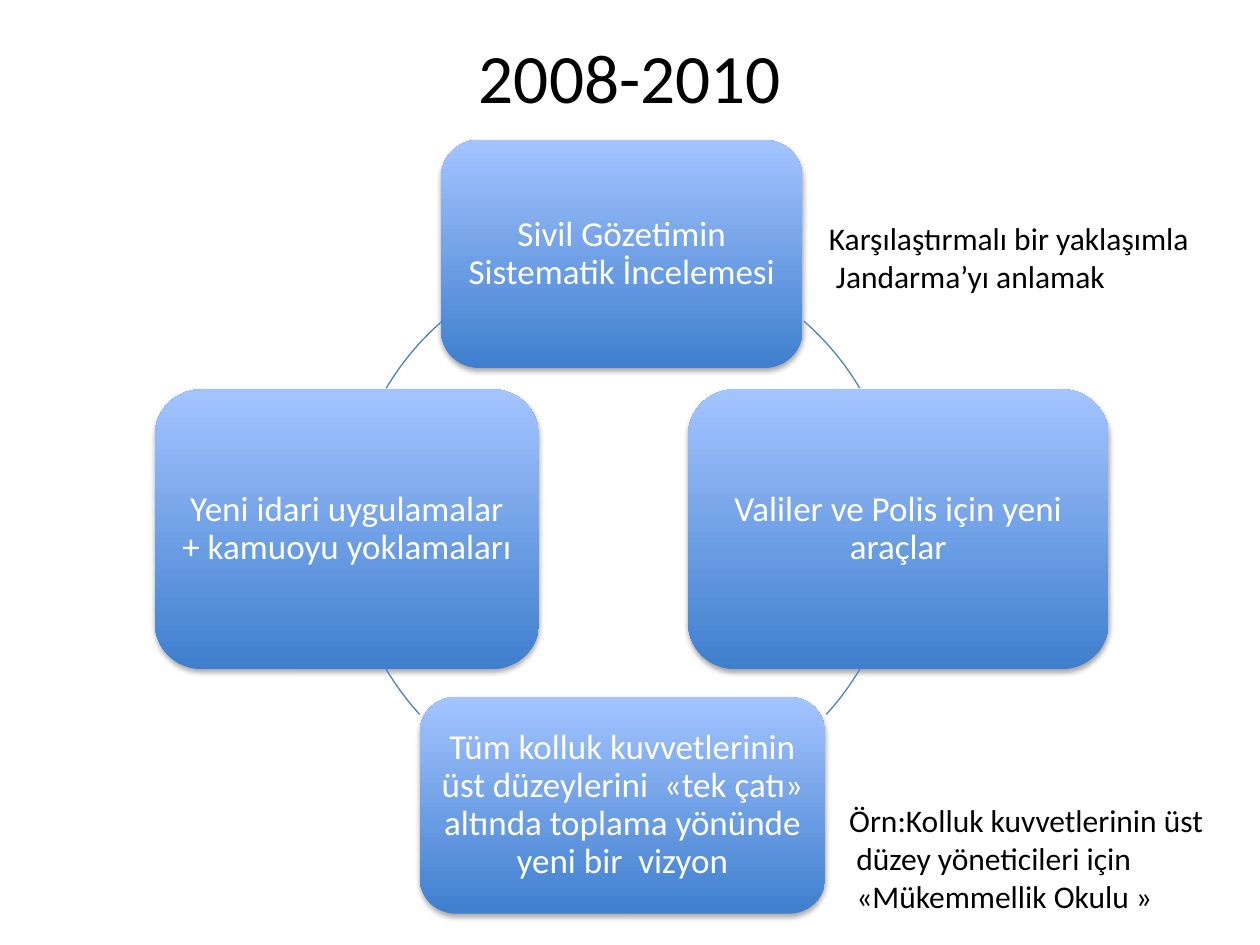
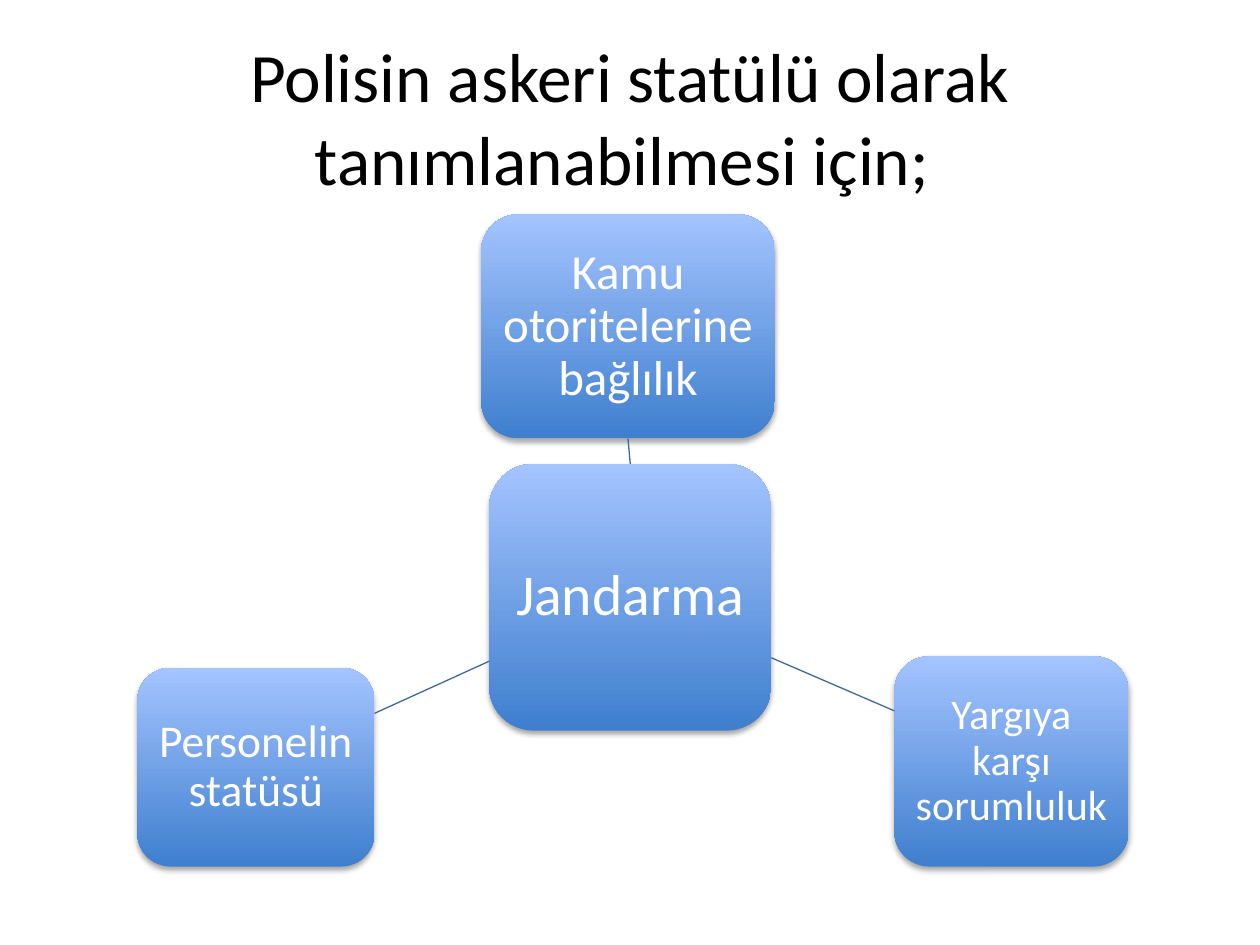
"""Build two diagram slides on civilian oversight and the status of the Jandarma."""
from lxml import etree
from pptx import Presentation
from pptx import util as u
from pptx.dml import color
from pptx.enum import shapes, text
from pptx.oxml import ns

FONT = "Calibri"
COLOURS = {"text": "000000", "box_text": "FFFFFF", "box_bottom": "3F7FCE",
           "box_top": "A4C4FF", "arc": "4F81BD", "spoke": "3F6797", "shadow": "000000"}
TITLE_SIZE, NOTE_SIZE, LINE_WIDTH = 39.6, 18, 0.75

CYCLE_TITLE = ("2008-2010", (1.27, 0.48, 22.86, 2.11))
CYCLE_INSET = 0.21
CYCLE_BOXES = [
    ("Sivil Gözetimin Sistematik İncelemesi", 20, (8.89, 2.82, 7.29, 4.6)),
    ("Valiler ve Polis için yeni araçlar", 20, (13.87, 7.85, 8.48, 5.64)),
    ("Tüm kolluk kuvvetlerinin üst düzeylerini  «tek çatı» altında toplama "
     "yönünde yeni bir  vizyon", 20, (8.46, 14.05, 8.18, 4.37)),
    ("Yeni idari uygulamalar + kamuoyu yoklamaları", 20, (3.12, 7.85, 7.75, 5.64)),
]
CYCLE_RING = (7.01, 5.11, 11.1, 11.1)
RIGHT_ARCS = [(311.1, 329.3), (30.7, 42.4)]
NOTES = [
    (["Örn:Kolluk kuvvetlerinin üst", " düzey yöneticileri için", " «Mükemmellik Okulu\u00a0»"],
     (16.87, 16.03, 7.75, 2.57)),
    (["Karşılaştırmalı bir yaklaşımla", " Jandarma’yı anlamak"], (16.46, 4.29, 7.87, 1.8)),
]

STATUS_TITLE = ("Polisin askeri statülü olarak tanımlanabilmesi için; ",
                (1.27, 0.76, 22.86, 3.18))
STATUS_INSET = 0.18
STATUS_BOXES = [
    ("Jandarma", 33, (9.86, 9.35, 5.69, 5.38)),
    ("Kamu otoritelerine bağlılık", 28, (9.7, 4.32, 5.92, 4.52)),
    ("Yargıya karşı sorumluluk", 24, (18.03, 13.23, 4.72, 4.24)),
    ("Personelin statüsü", 26, (2.77, 13.46, 4.78, 4.01)),
]
SIDE_SPOKES = [(15.55, 13.26, 18.03, 14.33), (9.86, 13.33, 7.55, 14.38)]


def lengths(values):
    return [u.Cm(value) for value in values]


def rgb(name):
    return color.RGBColor.from_string(COLOURS[name])


def add_run(paragraph, words, size, colour):
    run = paragraph.add_run()
    run.text = words
    run.font.name, run.font.size = FONT, u.Pt(size)
    run.font.color.rgb = rgb(colour)


def set_insets(frame, inset):
    frame.margin_left = frame.margin_right = u.Cm(inset)
    frame.margin_top = frame.margin_bottom = u.Cm(inset)


def style_line(shape, colour):
    shape.line.color.rgb = rgb(colour)
    shape.line.width = u.Pt(LINE_WIDTH)


def add_titled_slide(presentation, words, place):
    slide = presentation.slides.add_slide(presentation.slide_layouts[5])
    title = slide.shapes.title
    title.left, title.top, title.width, title.height = lengths(place)
    frame = title.text_frame
    frame.auto_size = text.MSO_AUTO_SIZE.NONE
    frame.vertical_anchor = text.MSO_ANCHOR.MIDDLE
    frame.paragraphs[0].alignment = text.PP_ALIGN.CENTER
    add_run(frame.paragraphs[0], words, TITLE_SIZE, "text")
    return slide


def add_soft_shadow(shape):
    shape.shadow.inherit = False
    effects = shape._element.spPr.find(ns.qn("a:effectLst"))
    shadow = etree.SubElement(effects, ns.qn("a:outerShdw"), blurRad="40000", dist="23000",
                              dir="5400000", rotWithShape="0")
    tint = etree.SubElement(shadow, ns.qn("a:srgbClr"), val=COLOURS["shadow"])
    etree.SubElement(tint, ns.qn("a:alpha"), val="35000")


def add_box(slide, words, size, place, inset):
    box = slide.shapes.add_shape(shapes.MSO_SHAPE.ROUNDED_RECTANGLE, *lengths(place))
    box.fill.gradient()
    box.fill.gradient_angle = 90
    for stop, name in zip(box.fill.gradient_stops, ("box_bottom", "box_top")):
        stop.color.rgb = rgb(name)
    box.line.fill.background()
    add_soft_shadow(box)
    frame = box.text_frame
    frame.word_wrap = True
    frame.vertical_anchor = text.MSO_ANCHOR.MIDDLE
    set_insets(frame, inset)
    paragraph = frame.paragraphs[0]
    paragraph.alignment = text.PP_ALIGN.CENTER
    paragraph.line_spacing = 0.9
    add_run(paragraph, words, size, "box_text")
    return box


def add_arc(slide, start, end):
    arc = slide.shapes.add_shape(shapes.MSO_SHAPE.ARC, *lengths(CYCLE_RING))
    for index, degrees in enumerate((start, end)):
        arc.adjustments[index] = degrees * 0.6
    arc.fill.background()
    arc.shadow.inherit = False
    style_line(arc, "arc")


def add_note(slide, lines, place):
    frame = slide.shapes.add_textbox(*lengths(place)).text_frame
    frame.word_wrap = False
    for index, line in enumerate(lines):
        paragraph = frame.add_paragraph() if index else frame.paragraphs[0]
        add_run(paragraph, line, NOTE_SIZE, "text")


def add_spoke(slide, ends):
    spoke = slide.shapes.add_connector(shapes.MSO_CONNECTOR.STRAIGHT, *lengths(ends))
    style_line(spoke, "spoke")
    etree.SubElement(spoke._element.spPr, ns.qn("a:effectLst"))
    return spoke


def build_cycle_slide(presentation):
    slide = add_titled_slide(presentation, *CYCLE_TITLE)
    for box in CYCLE_BOXES:
        add_box(slide, *box, CYCLE_INSET)
    for start, end in RIGHT_ARCS:
        add_arc(slide, start, end)
        add_arc(slide, (540 - end) % 360, (540 - start) % 360)
    for note in NOTES:
        add_note(slide, *note)


def build_status_slide(presentation):
    slide = add_titled_slide(presentation, *STATUS_TITLE)
    centre, upper, *_ = [add_box(slide, *box, STATUS_INSET) for box in STATUS_BOXES]
    upright = add_spoke(slide, (0, 0, 0, 0))
    upright.begin_connect(centre, 0)
    upright.end_connect(upper, 2)
    for ends in SIDE_SPOKES:
        add_spoke(slide, ends)


def main():
    presentation = Presentation()
    presentation.slide_width, presentation.slide_height = u.Cm(25.4), u.Cm(19.05)
    build_cycle_slide(presentation)
    build_status_slide(presentation)
    presentation.save("out.pptx")


if __name__ == "__main__":
    main()
